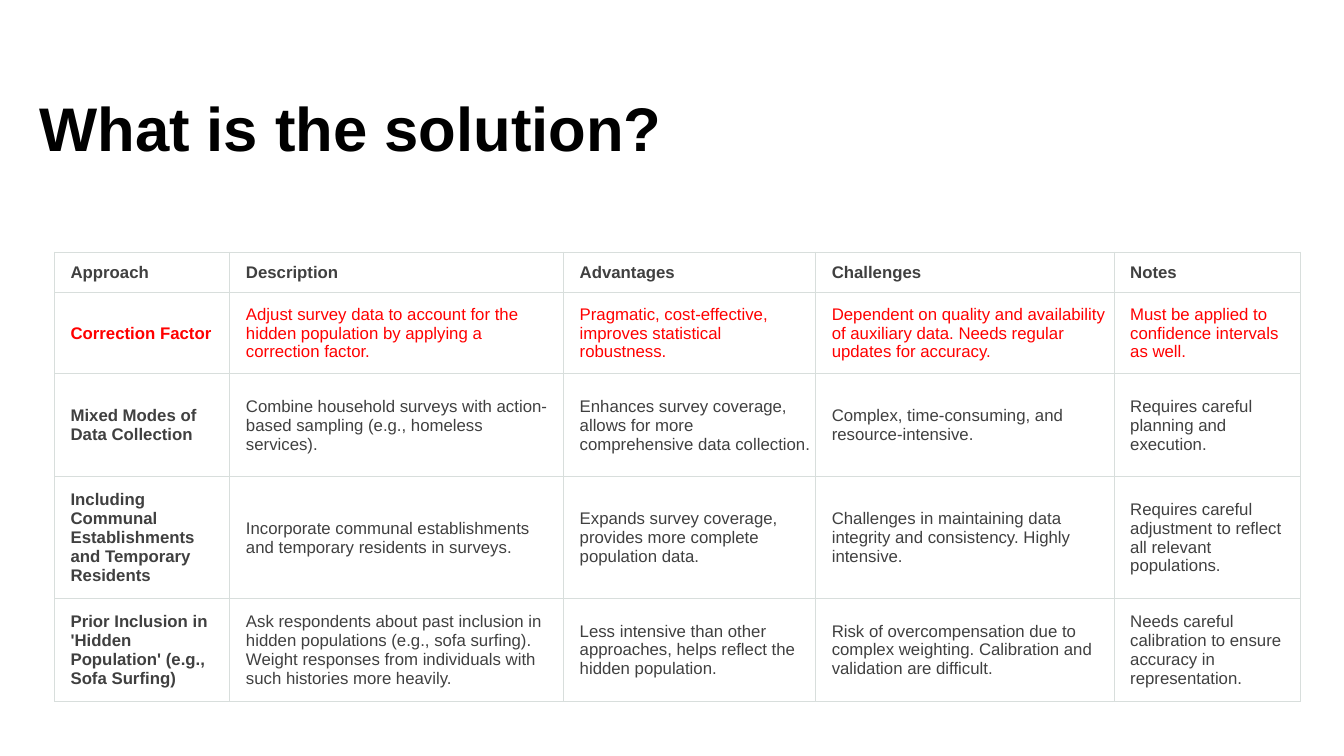
"""Build a slide with a table comparing approaches to the hidden population."""
import lxml.etree
import pptx
import pptx.dml.color
import pptx.enum.text
import pptx.oxml.ns
import pptx.util

Inches = pptx.util.Inches
COLORS = {"title": "000000", "text": "404040", "highlight": "FF0000",
          "border": "D8DEDC", "background": "FFFFFF"}
COLUMN_WIDTHS = [1.74, 3.31, 2.5, 2.96, 1.85]
ROW_HEIGHTS = [0.4, 0.81, 1.02, 1.21, 1.02]
ROWS = [
    ["Approach", "Description", "Advantages", "Challenges", "Notes"],
    ["Correction Factor",
     "Adjust survey data to account for the hidden population by applying a correction factor.",
     "Pragmatic, cost-effective, improves statistical robustness.",
     "Dependent on quality and availability of auxiliary data. Needs regular updates for accuracy.",
     "Must be applied to confidence intervals as well."],
    ["Mixed Modes of Data Collection",
     "Combine household surveys with action-based sampling (e.g., homeless services).",
     "Enhances survey coverage, allows for more comprehensive data collection.",
     "Complex, time-consuming, and resource-intensive.",
     "Requires careful planning and execution."],
    ["Including Communal Establishments and Temporary Residents",
     "Incorporate communal establishments and temporary residents in surveys.",
     "Expands survey coverage, provides more complete population data.",
     "Challenges in maintaining data integrity and consistency. Highly intensive.",
     "Requires careful adjustment to reflect all relevant populations."],
    ["Prior Inclusion in 'Hidden Population' (e.g., Sofa Surfing)",
     "Ask respondents about past inclusion in hidden populations (e.g., sofa surfing). "
     "Weight responses from individuals with such histories more heavily.",
     "Less intensive than other approaches, helps reflect the hidden population.",
     "Risk of overcompensation due to complex weighting. Calibration and validation are difficult.",
     "Needs careful calibration to ensure accuracy in representation."],
]


def write_text(frame, text, size=12, color="text", bold=False, line_spacing=1.0):
    frame.word_wrap = True
    paragraph = frame.paragraphs[0]
    paragraph.alignment = pptx.enum.text.PP_ALIGN.LEFT
    paragraph.line_spacing = line_spacing
    run = paragraph.add_run()
    run.text = text
    run.font.name = "Arial"
    run.font.size = pptx.util.Pt(size)
    run.font.bold = bold
    run.font.color.rgb = pptx.dml.color.RGBColor.from_string(COLORS[color])


def add_borders(cell, color, width=0.75):
    properties = cell._tc.get_or_add_tcPr()
    for side in ("lnL", "lnR", "lnT", "lnB"):
        line = lxml.etree.SubElement(properties, pptx.oxml.ns.qn(f"a:{side}"),
                                     w=str(pptx.util.Pt(width)))
        fill = lxml.etree.SubElement(line, pptx.oxml.ns.qn("a:solidFill"))
        lxml.etree.SubElement(fill, pptx.oxml.ns.qn("a:srgbClr"), val=COLORS[color])


presentation = pptx.Presentation()
presentation.slide_width = Inches(13.33)
presentation.slide_height = Inches(7.5)
slide = presentation.slides.add_slide(presentation.slide_layouts[5])

title = slide.shapes.title
title.left, title.top = Inches(0.39), Inches(0.98)
title.width, title.height = Inches(9.84), Inches(1.5)
title_frame = title.text_frame
title_frame.margin_left = title_frame.margin_right = 0
title_frame.margin_top = title_frame.margin_bottom = 0
title_frame.auto_size = pptx.enum.text.MSO_AUTO_SIZE.NONE
title_frame.vertical_anchor = pptx.enum.text.MSO_ANCHOR.TOP
write_text(title_frame, "What is the solution?", size=44, color="title", bold=True,
           line_spacing=0.9)

table = slide.shapes.add_table(
    len(ROWS), len(COLUMN_WIDTHS), Inches(0.54), Inches(2.5),
    Inches(sum(COLUMN_WIDTHS)), Inches(sum(ROW_HEIGHTS))).table
table.horz_banding = False
for column, width in zip(table.columns, COLUMN_WIDTHS):
    column.width = Inches(width)

for row_index, (row, height) in enumerate(zip(ROWS, ROW_HEIGHTS)):
    table.rows[row_index].height = Inches(height)
    for column_index, text in enumerate(row):
        cell = table.cell(row_index, column_index)
        cell.margin_left, cell.margin_right = Inches(0.16), Inches(0.04)
        cell.margin_top = cell.margin_bottom = Inches(0.08)
        cell.vertical_anchor = pptx.enum.text.MSO_ANCHOR.MIDDLE
        add_borders(cell, "border")
        cell.fill.solid()
        cell.fill.fore_color.rgb = pptx.dml.color.RGBColor.from_string(COLORS["background"])
        write_text(cell.text_frame, text,
                   color="highlight" if row_index == 1 else "text",
                   bold=row_index == 0 or column_index == 0)

presentation.save("out.pptx")
